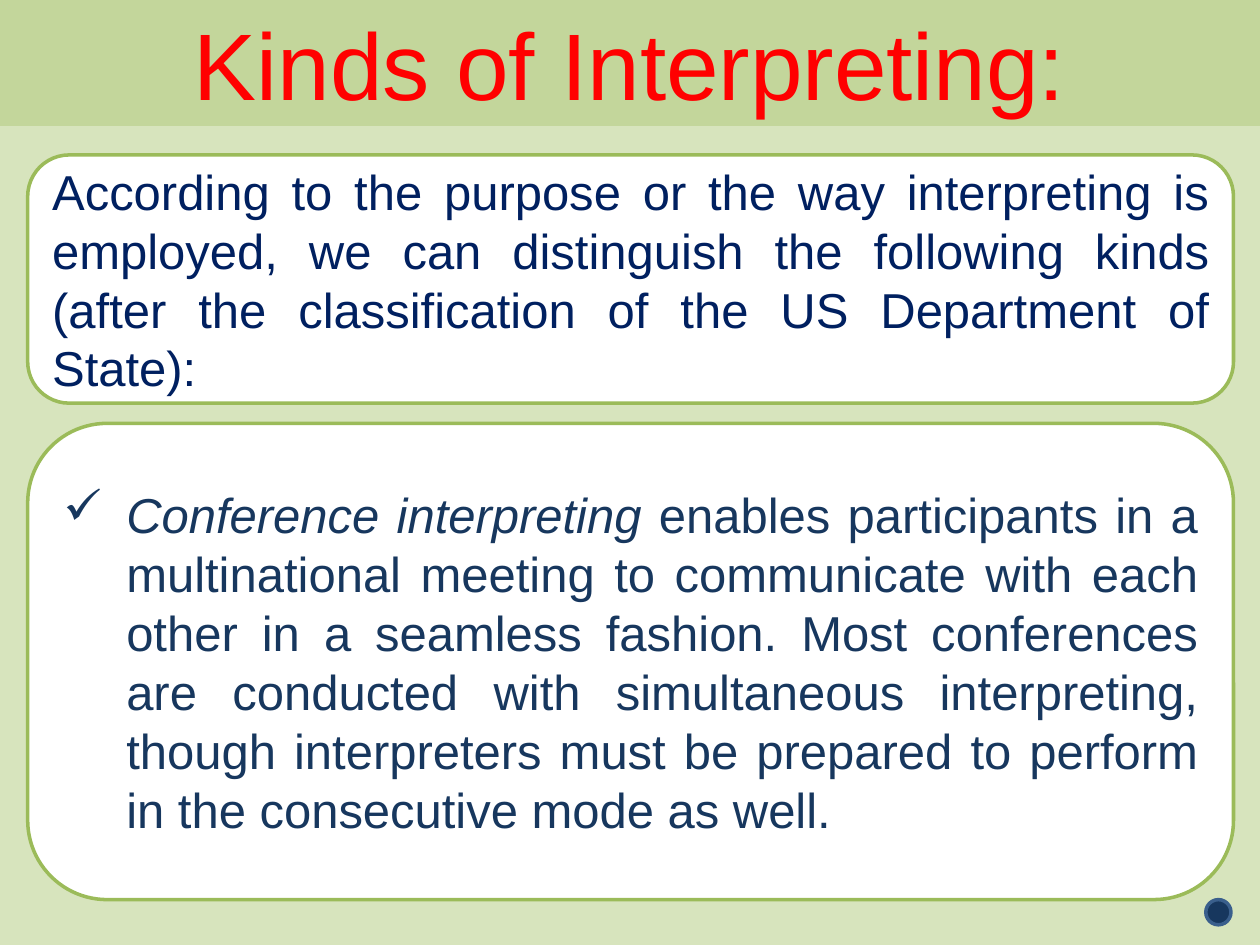
import pptx
import pptx.util
import pptx.dml.color
import pptx.enum.shapes
import pptx.enum.text
import pptx.oxml
import pptx.oxml.ns
from lxml import etree

Pt = pptx.util.Pt
RGB = pptx.dml.color.RGBColor
KIND = pptx.enum.shapes.MSO_SHAPE
ALIGN = pptx.enum.text.PP_ALIGN

PALE = RGB(0xD7, 0xE4, 0xBD)
BAND = RGB(0xC3, 0xD6, 0x9B)
GREEN = RGB(0x9B, 0xBB, 0x59)
WHITE = RGB(0xFF, 0xFF, 0xFF)
RED = RGB(0xFF, 0x00, 0x00)
NAVY = RGB(0x00, 0x20, 0x60)
BLUE = RGB(0x17, 0x37, 0x5E)
STEEL = RGB(0x3A, 0x5F, 0x8C)

LEFT, WIDTH = 15.84, 689.04

INTRO = (
    "According to the purpose or the way interpreting is employed, "
    "we can distinguish the following kinds (after the classification "
    "of the US Department of State):"
)
TERM = "Conference interpreting "
BODY = (
    "enables participants in a multinational meeting to communicate "
    "with each other in a seamless fashion. Most conferences are "
    "conducted with simultaneous interpreting, though interpreters must "
    "be prepared to perform in the consecutive mode as well."
)


def add_box(slide, kind, left, top, width, height, fill, line):
    box = slide.shapes.add_shape(kind, Pt(left), Pt(top), Pt(width), Pt(height))
    box.shadow.inherit = False
    box.fill.solid()
    box.fill.fore_color.rgb = fill
    box.line.color.rgb = line
    box.line.width = Pt(2)
    return box


def add_panel(slide, top, height):
    return add_box(slide, KIND.ROUNDED_RECTANGLE, LEFT, top, WIDTH, height,
                   WHITE, GREEN)


def set_text(box, parts, size, color, align):
    """Write (text, italic) parts as one paragraph and return it."""
    frame = box.text_frame
    frame.word_wrap = True
    frame.vertical_anchor = pptx.enum.text.MSO_ANCHOR.MIDDLE
    para = frame.paragraphs[0]
    para.alignment = align
    para.font.name = "Arial"
    para.font.size = Pt(size)
    para.font.color.rgb = color
    for text, slant in parts:
        run = para.add_run()
        run.text = text
        if slant:
            run.font.italic = True
    return para


def add_tick(para, indent):
    """Give the paragraph a hanging check mark."""
    props = para._p.get_or_add_pPr()
    props.set("marL", str(Pt(indent)))
    props.set("indent", str(-Pt(indent)))
    mark = etree.Element(pptx.oxml.ns.qn("a:buChar"), char="✓")
    props.insert_element_before(mark, "a:tabLst", "a:defRPr", "a:extLst")


def main():
    deck = pptx.Presentation()
    deck.slide_width, deck.slide_height = Pt(720), Pt(540)
    slide = deck.slides.add_slide(deck.slide_layouts[6])
    slide.background.fill.solid()
    slide.background.fill.fore_color.rgb = PALE

    title = add_box(slide, KIND.RECTANGLE, 0, 0, 720, 71.28, BAND, BAND)
    set_text(title, [("Kinds of Interpreting:", False)], 54, RED, ALIGN.CENTER)

    intro = add_panel(slide, 88.56, 141.84)
    set_text(intro, [(INTRO, False)], 28, NAVY, ALIGN.JUSTIFY)

    detail = add_panel(slide, 241.92, 272.16)
    para = set_text(detail, [(TERM, True), (BODY, False)], 28, BLUE,
                    ALIGN.JUSTIFY)
    add_tick(para, 36)

    add_box(slide, KIND.OVAL, 689.04, 514.08, 14.4, 14.4, BLUE, STEEL)
    deck.save("out.pptx")


if __name__ == "__main__":
    main()
